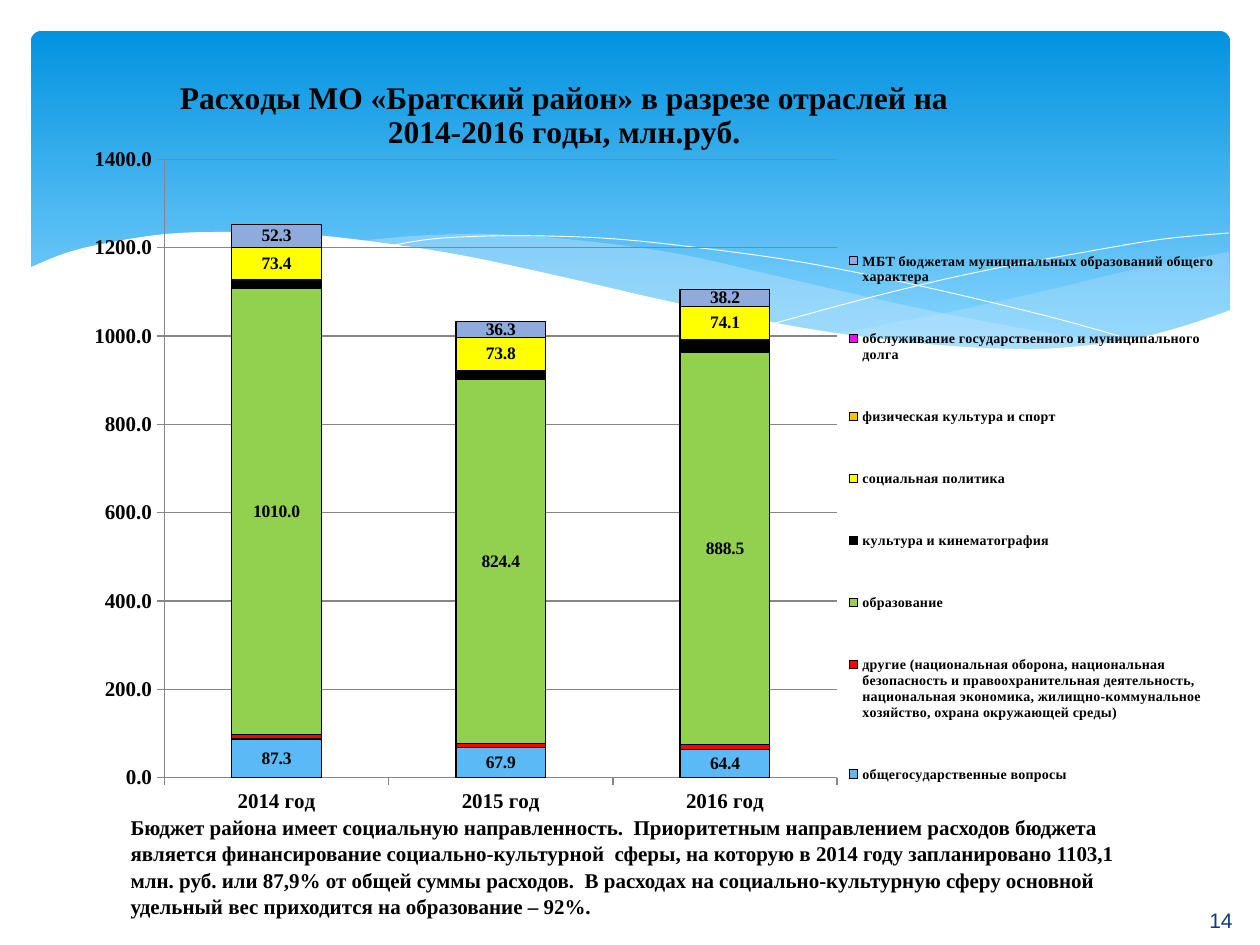
from dataclasses import dataclass
from lxml import etree
from pptx import Presentation
from pptx.chart.data import CategoryChartData
from pptx.dml.color import RGBColor
from pptx.enum.chart import XL_CHART_TYPE, XL_LABEL_POSITION, XL_LEGEND_POSITION, XL_TICK_MARK
from pptx.enum.shapes import MSO_SHAPE
from pptx.enum.text import MSO_ANCHOR, MSO_AUTO_SIZE, PP_ALIGN
from pptx.oxml.ns import qn
from pptx.util import Pt

STACKED = XL_CHART_TYPE.COLUMN_STACKED
LABEL_CENTER = XL_LABEL_POSITION.CENTER
LEGEND_RIGHT = XL_LEGEND_POSITION.RIGHT
CROSS = XL_TICK_MARK.OUTSIDE
ROUNDED = MSO_SHAPE.ROUNDED_RECTANGLE
MIDDLE = MSO_ANCHOR.MIDDLE
FIXED = MSO_AUTO_SIZE.NONE
LEFT, CENTER = PP_ALIGN.LEFT, PP_ALIGN.CENTER

PX = 914400 / 126
PAGE = (1260, 945)


@dataclass(frozen=True)
class Theme:
    serif: str = "Times New Roman"
    sans: str = "Arial"
    ink: str = "000000"
    white: str = "FFFFFF"
    sky_top: str = "0293E0"
    sky_bottom: str = "83D3FE"
    mist: str = "C6E7FC"
    grid: str = "868686"
    number: str = "073E87"
    heading: int = 18
    body: int = 12
    label: int = 10
    legend: int = 8


THEME = Theme()

CATEGORIES = ["2014 год", "2015 год", "2016 год"]
SERIES = [
    ("общегосударственные вопросы", (87.3, 67.9, 64.4), "5BBAF6", True),
    ("другие (национальная оборона, национальная безопасность и правоохранительная деятельность, "
     "национальная экономика, жилищно-коммунальное хозяйство, охрана окружающей среды)",
     (10, 10, 10), "FF0000", False),
    ("образование", (1010, 824.4, 888.5), "92D050", True),
    ("культура и кинематография", (20, 20, 30), "000000", False),
    ("социальная политика", (73.4, 73.8, 74.1), "FFFF00", True),
    ("физическая культура и спорт", (0, None, None), "FFC000", False),
    ("обслуживание государственного и муниципального долга", (0, 0, 0), "FF00FF", False),
    ("МБТ бюджетам муниципальных образований общего характера", (52.3, 36.3, 38.2), "8FAADC", True),
]
HEADING = ["Расходы МО «Братский район» в разрезе отраслей на", "2014-2016 годы, млн.руб."]
SUMMARY = (
    "Бюджет района имеет социальную направленность.  Приоритетным направлением расходов бюджета "
    "является финансирование социально-культурной  сферы, на которую в 2014 году запланировано "
    "1103,1 млн. руб. или 87,9% от общей суммы расходов.  В расходах на социально-культурную сферу "
    "основной удельный вес приходится на образование – 92%."
)

RIGHT_MIST = [
    [(1198, 221), (1147, 230), (1092, 241), (1017, 259), (918, 281), (804, 303)],
    [(804, 303), (874, 311), (938, 317), (995, 319), (1056, 316), (1109, 308), (1156, 295), (1199, 280)],
]
MIDDLE_MIST = [
    [(1094, 313), (1024, 303), (946, 289), (859, 271), (741, 244), (668, 227), (617, 218),
     (554, 210), (498, 205), (448, 203), (382, 205), (329, 210)],
    [(329, 210), (425, 225), (507, 241), (588, 261), (682, 281), (768, 298), (845, 309),
     (911, 316), (972, 319), (1037, 319), (1094, 313)],
]
FALLING_LINE = [(358, 215), (401, 208), (457, 205), (515, 205), (585, 208), (670, 217),
                (770, 231), (885, 254), (1016, 285), (1112, 312)]
RISING_LINE = [(741, 293), (845, 265), (947, 241), (1060, 220), (1133, 208), (1198, 202)]
WHITE_WAVE = [
    [(1200, 279), (1153, 295), (1102, 308), (1040, 316), (988, 318), (906, 314), (811, 303),
     (729, 289), (636, 270), (532, 246), (429, 224), (337, 210), (259, 202), (192, 201),
     (135, 203), (76, 212), (35, 222), (-2, 237)],
    [(-2, 384), (1200, 384)],
]


def px(value):
    return round(value * PX)


def rgb(code):
    return RGBColor.from_string(code)


def style(font, size, color=THEME.ink, name=THEME.serif, bold=True):
    font.name, font.size, font.bold = name, Pt(size), bold
    font.color.rgb = rgb(color)


def smooth(knots, steps=6):
    padded = [knots[0], *knots, knots[-1]]
    points = [knots[0]]
    for a, b, c, d in zip(padded, padded[1:], padded[2:], padded[3:]):
        for step in range(1, steps + 1):
            t = step / steps
            points.append(tuple(
                (2 * q + (r - p) * t + (2 * p - 5 * q + 4 * r - s) * t ** 2
                 + (3 * q - p - 3 * r + s) * t ** 3) / 2
                for p, q, r, s in zip(a, b, c, d)))
    return points


def add_curve(page, box, edges, fill=None, opacity=100):
    points = [(px(box[0] + x), px(box[1] + y)) for edge in edges for x, y in smooth(edge)]
    builder = page.shapes.build_freeform(*points[0], scale=1.0)
    builder.add_line_segments(points[1:], close=fill is not None)
    shape = builder.convert_to_shape()
    shape.shadow.inherit = False
    if fill is None:
        shape.fill.background()
        shape.line.color.rgb = rgb(THEME.white)
        shape.line.width = Pt(0.5)
        return
    shape.line.fill.background()
    shape.fill.solid()
    shape.fill.fore_color.rgb = rgb(fill)
    if opacity < 100:
        color = shape.fill._xPr.find(f".//{qn('a:srgbClr')}")
        etree.SubElement(color, qn("a:alpha"), val=str(opacity * 1000))


def add_backdrop(page, box):
    sky = page.shapes.add_shape(ROUNDED, *map(px, box))
    sky.adjustments[0] = 0.03
    sky.shadow.inherit = False
    sky.line.fill.background()
    sky.fill.gradient()
    sky.fill.gradient_angle = 270
    for stop, color, position in zip(sky.fill.gradient_stops,
                                     (THEME.sky_top, THEME.sky_bottom), (0, 0.9)):
        stop.color.rgb = rgb(color)
        stop.position = position
    add_curve(page, box, RIGHT_MIST, THEME.mist, 29)
    add_curve(page, box, MIDDLE_MIST, THEME.mist, 40)
    add_curve(page, box, [FALLING_LINE])
    add_curve(page, box, [RISING_LINE])
    add_curve(page, box, WHITE_WAVE, THEME.white)


def set_layout(element, index, inner=False, **fractions):
    for old in element.findall(qn("c:layout")):
        element.remove(old)
    layout = etree.Element(qn("c:layout"))
    manual = etree.SubElement(layout, qn("c:manualLayout"))
    if inner:
        etree.SubElement(manual, qn("c:layoutTarget"), val="inner")
    for key in ("x", "y"):
        etree.SubElement(manual, qn(f"c:{key}Mode"), val="edge")
    for key, value in fractions.items():
        etree.SubElement(manual, qn(f"c:{key}"), val=str(value))
    element.insert(index, layout)


def format_axes(chart):
    for axis in (chart.category_axis, chart.value_axis):
        style(axis.tick_labels.font, THEME.body)
        axis.major_tick_mark = CROSS
        axis.format.line.color.rgb = rgb(THEME.grid)
    values = chart.value_axis
    values.minimum_scale, values.maximum_scale, values.major_unit = 0, 1400, 200
    values.tick_labels.number_format = "0.0"
    values.tick_labels.number_format_is_linked = False
    values.has_major_gridlines = True
    values.major_gridlines.format.line.color.rgb = rgb(THEME.grid)


def format_series(series, color, labelled):
    series.format.fill.solid()
    series.format.fill.fore_color.rgb = rgb(color)
    series.format.line.color.rgb = rgb(THEME.ink)
    series.format.line.width = Pt(0.75)
    if labelled:
        labels = series.data_labels
        labels.show_value = True
        labels.number_format = "0.0"
        labels.number_format_is_linked = False
        labels.position = LABEL_CENTER
        style(labels.font, THEME.label)


def add_spending_chart(page, box):
    data = CategoryChartData(number_format="0.0")
    data.categories = CATEGORIES
    for name, values, _, _ in SERIES:
        data.add_series(name, values)
    chart = page.shapes.add_chart(STACKED, *map(px, box), data).chart
    style(chart.font, THEME.label, bold=False)
    plot = chart.plots[0]
    plot.gap_width, plot.overlap, plot.vary_by_categories = 150, 100, False
    for series, (_, _, color, labelled) in zip(plot.series, SERIES):
        format_series(series, color, labelled)
    format_axes(chart)
    chart.has_title = True
    frame = chart.chart_title.text_frame
    for index, line in enumerate(HEADING):
        para = frame.add_paragraph() if index else frame.paragraphs[0]
        para.alignment = CENTER
        span = para.add_run()
        span.text = line
        style(span.font, THEME.heading)
    chart.has_legend = True
    chart.legend.position = LEGEND_RIGHT
    chart.legend.include_in_layout = False
    style(chart.legend.font, THEME.legend)
    set_layout(chart._chartSpace.chart.plotArea, 0, True, x=0.09, y=0.126, w=0.574, h=0.706)
    set_layout(chart.legend._element, 1, x=0.67, y=0.18, w=0.32, h=0.71)
    set_layout(chart.chart_title._element, 1, x=0.1, y=0.03)


def fill_text(shape, box, text, alignment, **look):
    shape.left, shape.top, shape.width, shape.height = map(px, box)
    frame = shape.text_frame
    frame.word_wrap = True
    frame.auto_size = FIXED
    frame.vertical_anchor = MIDDLE
    para = frame.paragraphs[0]
    para.alignment = alignment
    span = para.add_run()
    span.text = text
    style(span.font, THEME.body, **look)
    return para


def add_summary(page, box):
    para = fill_text(page.shapes.title, box, SUMMARY, LEFT)
    para.line_spacing = 1.05


def add_page_number(page, box):
    shape = page.shapes.add_textbox(*map(px, box))
    fill_text(shape, box, "14", CENTER, color=THEME.number, name=THEME.sans, bold=False)


def main():
    deck = Presentation()
    deck.slide_width, deck.slide_height = map(px, PAGE)
    page = deck.slides.add_slide(deck.slide_layouts[5])
    add_backdrop(page, (31, 31, 1199, 340))
    add_page_number(page, (1182, 895, 78, 50))
    add_spending_chart(page, (59, 49, 1172, 876))
    add_summary(page, (118, 817, 1016, 98))
    deck.save("out.pptx")


if __name__ == "__main__":
    main()
